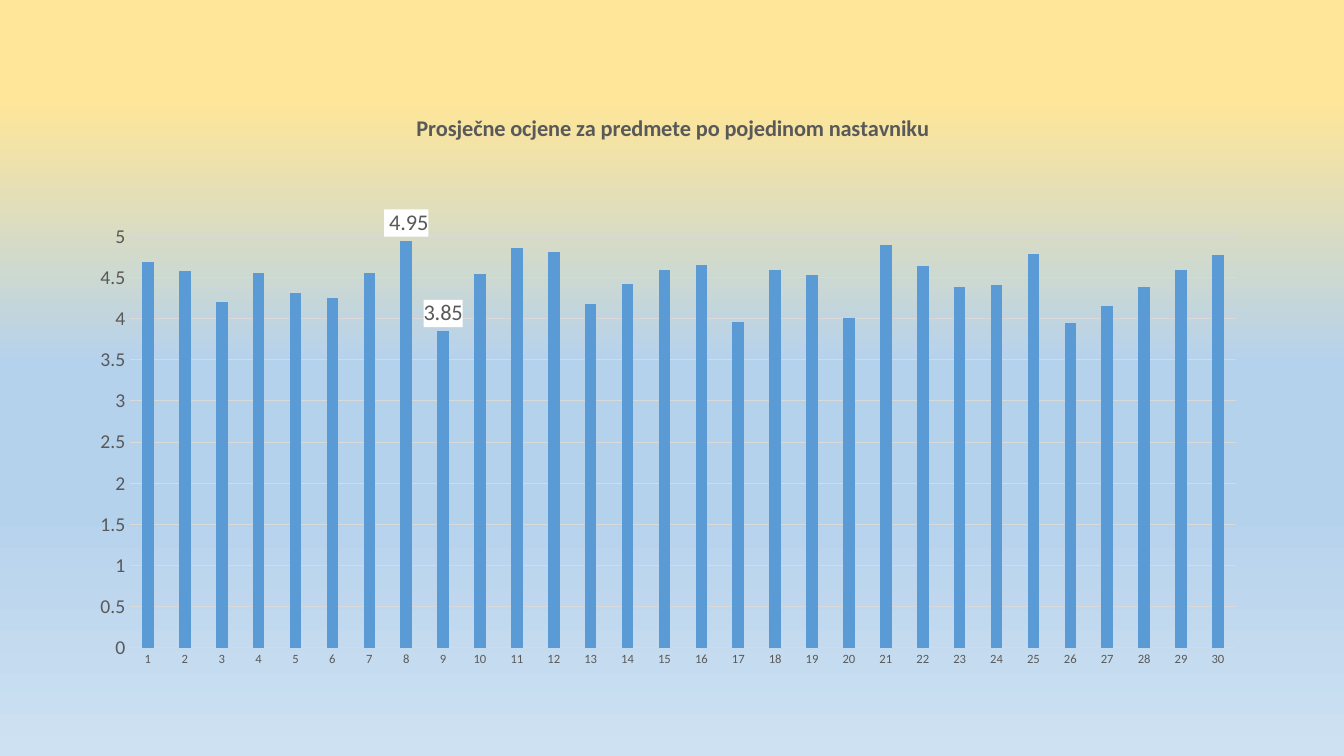
from dataclasses import dataclass

from lxml import etree
from pptx import Presentation
from pptx import util as u
from pptx.chart.data import CategoryChartData
from pptx.dml.color import RGBColor
from pptx.enum import chart as ch
from pptx.oxml import ns


@dataclass
class Theme:
    font: str = "Calibri"
    grey: str = "595959"
    rule: str = "D9D9D9"
    bar: str = "5B9BD5"
    label_fill: str = "FFFFFF"
    sky: tuple = ((13, "FFE699"), (48, "B5D2EC"), (67, "B5D2EC"), (100, "CEE1F2"))
    title_size: int = 16
    label_size: int = 16
    value_size: int = 14
    category_size: int = 9


theme = Theme()


def style_font(font, size, bold=False):
    font.name, font.size, font.bold = theme.font, u.Pt(size), bold
    font.color.rgb = RGBColor.from_string(theme.grey)


def set_layout(parent, **values):
    """Place a chart part by fractions of the chart's size."""
    layout = parent.find(ns.qn("c:layout"))
    if layout is None:
        layout = etree.Element(ns.qn("c:layout"))
        parent.insert(0, layout)
    manual = etree.SubElement(layout, ns.qn("c:manualLayout"))
    for name, value in values.items():
        etree.SubElement(manual, ns.qn(f"c:{name}")).set("val", str(value))


deck = Presentation()
deck.slide_width, deck.slide_height = u.Cm(33.87), u.Cm(19.05)
page = deck.slides.add_slide(deck.slide_layouts[6])

# Background: vertical gradient
backdrop = page.background.fill
backdrop.gradient()
backdrop.gradient_angle = 270
stops = page.background._cSld.find(".//" + ns.qn("a:gsLst"))
stops.clear()
for percent, colour in theme.sky:
    stop = etree.SubElement(stops, ns.qn("a:gs"), pos=str(percent * 1000))
    etree.SubElement(stop, ns.qn("a:srgbClr"), val=colour)

# Chart with one average grade per teacher
grades = [4.69, 4.58, 4.2, 4.56, 4.31, 4.25, 4.55, 4.95, 3.85, 4.54,
          4.86, 4.81, 4.18, 4.42, 4.59, 4.65, 3.96, 4.59, 4.53, 4.01,
          4.89, 4.64, 4.38, 4.41, 4.79, 3.95, 4.16, 4.39, 4.59, 4.78]
data = CategoryChartData()
data.categories = [str(number) for number in range(1, len(grades) + 1)]
data.add_series("Series 1", grades)
chart = page.shapes.add_chart(
    ch.XL_CHART_TYPE.COLUMN_CLUSTERED,
    u.Cm(2.33), u.Cm(2.13), u.Cm(29.21), u.Cm(15.02), data).chart
chart.has_legend = False
chart.font.name, chart.font.size = theme.font, u.Pt(10)
chart_xml = chart._chartSpace.chart
set_layout(chart_xml.plotArea, layoutTarget="inner", xMode="edge", yMode="edge",
           x=0.032, y=0.255, w=0.955, h=0.69)

# Chart title
title = chart.chart_title
title.text_frame.text = "Prosječne ocjene za predmete po pojedinom nastavniku"
style_font(title.text_frame.paragraphs[0].runs[0].font, theme.title_size, bold=True)
set_layout(chart_xml.find(ns.qn("c:title")), xMode="edge", yMode="edge", x=0.276, y=0.04)

# Columns
plot = chart.plots[0]
plot.gap_width, plot.overlap, plot.vary_by_categories = 219, -27, False
series = plot.series[0]
series.format.fill.solid()
series.format.fill.fore_color.rgb = RGBColor.from_string(theme.bar)

# Axes
grade_axis, teacher_axis = chart.value_axis, chart.category_axis
for axis, size in ((grade_axis, theme.value_size), (teacher_axis, theme.category_size)):
    axis.major_tick_mark = axis.minor_tick_mark = ch.XL_TICK_MARK.NONE
    style_font(axis.tick_labels.font, size)
grade_axis.minimum_scale, grade_axis.maximum_scale, grade_axis.major_unit = 0, 5, 0.5
grade_axis.tick_labels.number_format = "General"
grade_axis.tick_labels.number_format_is_linked = False
grade_axis.format.line.fill.background()
for line in (grade_axis.major_gridlines.format.line, teacher_axis.format.line):
    line.color.rgb = RGBColor.from_string(theme.rule)
    line.width = u.Pt(0.75)

# Labels on the highest and the lowest grade
series.data_labels.show_value = False
highest = series.points[grades.index(max(grades))].data_label
lowest = series.points[grades.index(min(grades))].data_label
highest.text_frame.text = " 4.95"
style_font(highest.text_frame.paragraphs[0].runs[0].font, theme.label_size)
style_font(lowest.font, theme.label_size)
for label in (highest, lowest):
    label.position = ch.XL_LABEL_POSITION.OUTSIDE_END
for label_xml in chart_xml.iter(ns.qn("c:dLbl")):
    box = etree.Element(ns.qn("c:spPr"))
    fill = etree.SubElement(box, ns.qn("a:solidFill"))
    etree.SubElement(fill, ns.qn("a:srgbClr"), val=theme.label_fill)
    old_box = label_xml.find(ns.qn("c:spPr"))
    if old_box is not None:
        label_xml.remove(old_box)
    follower = label_xml.find(ns.qn("c:txPr"))
    if follower is None:
        follower = label_xml.find(ns.qn("c:dLblPos"))
    follower.addprevious(box)

deck.save("out.pptx")
